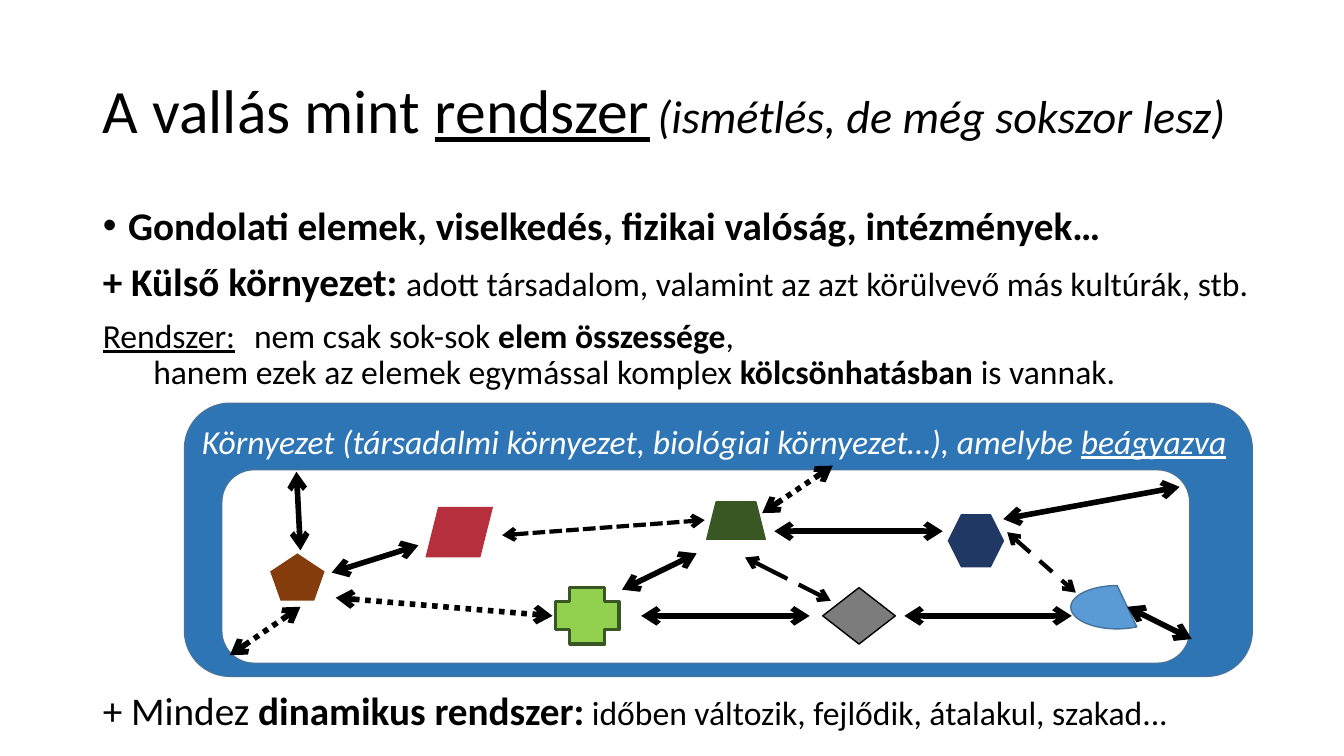
from lxml import etree
from pptx import Presentation
from pptx.dml.color import RGBColor
from pptx.enum.dml import MSO_LINE
from pptx.enum.shapes import MSO_CONNECTOR, MSO_SHAPE
from pptx.enum.text import MSO_ANCHOR, MSO_AUTO_SIZE, PP_ALIGN
from pptx.oxml.ns import qn
from pptx.util import Emu, Pt

PX = 9144
FONT = "Calibri"
STRAIGHT = MSO_CONNECTOR.STRAIGHT
ROUND_RECT = MSO_SHAPE.ROUNDED_RECTANGLE
DOTS, SHORT = MSO_LINE.ROUND_DOT, MSO_LINE.SQUARE_DOT
DASH, LONG = MSO_LINE.DASH, MSO_LINE.LONG_DASH
LEFT, TOP, MIDDLE = PP_ALIGN.LEFT, MSO_ANCHOR.TOP, MSO_ANCHOR.MIDDLE

COLORS = {
    "black": "000000", "white": "FFFFFF", "frame": "2E75B6", "edge": "43739E",
    "brown": "843C0C", "navy": "203864", "lime": "92D050", "green": "385723",
    "sky": "5B9BD5", "red": "B52F3C", "gray": "7C7C7C",
}

ELEMENTS = [
    (MSO_SHAPE.REGULAR_PENTAGON, (268, 549, 54, 47), "brown", None, 0),
    (MSO_SHAPE.HEXAGON, (940, 510, 56, 53), "navy", None, 0),
    (MSO_SHAPE.CROSS, (551, 583, 63, 56), "lime", "green", 2.25),
    (MSO_SHAPE.TRAPEZOID, (701, 498, 58, 37), "green", "green", 1),
    (MSO_SHAPE.CHORD, (1062, 581, 92, 43), "sky", "edge", 1),
    (MSO_SHAPE.PARALLELOGRAM, (422, 503, 67, 50), "red", None, 0),
    (MSO_SHAPE.DIAMOND, (816, 583, 72, 56), "gray", "black", 1),
]

INTERACTIONS = [
    ((636, 611, 803, 611), 4, None),
    ((768, 527, 935, 527), 4, None),
    ((498, 531, 699, 516), 3, SHORT),
    ((329, 568, 415, 541), 4, None),
    ((298, 546, 294, 468), 4, None),
    ((333, 593, 548, 611), 4, DOTS),
    ((897, 611, 1063, 611), 4, None),
    ((617, 585, 691, 549), 4, None),
    ((739, 553, 824, 596), 3, LONG),
    ((999, 528, 1067, 588), 3, DASH),
    ((995, 515, 1170, 483), 4, None),
    ((228, 650, 298, 602), 4, DOTS),
    ((1182, 634, 1118, 602), 4, None),
    ((756, 509, 826, 462), 4, DOTS),
]


def px(value):
    return Emu(value * PX)


def color(name):
    return RGBColor.from_string(COLORS[name])


def add_spans(para, spans, ink="black"):
    for text, size, style in spans:
        if text == "\n":
            para.add_line_break()
            continue
        span = para.add_run()
        span.text = text
        font = span.font
        font.name, font.size = FONT, Pt(size)
        font.color.rgb = color(ink)
        font.bold, font.italic, font.underline = ("b" in style, "i" in style, "u" in style)


def format_para(para, before=0, bullet=False, tab=None):
    para.alignment = LEFT
    para.line_spacing = 0.9
    para.space_before = Pt(before)
    props = para._p.get_or_add_pPr()
    indent = px(25) if bullet else 0
    props.set("marL", str(indent))
    props.set("indent", str(-indent))
    if bullet:
        etree.SubElement(props, qn("a:buChar")).set("char", "•")
    else:
        etree.SubElement(props, qn("a:buNone"))
    if tab:
        stops = etree.SubElement(props, qn("a:tabLst"))
        stop = etree.SubElement(stops, qn("a:tab"))
        stop.set("pos", str(px(tab)))
        stop.set("algn", "l")


def place_text(holder, box, anchor):
    holder.left, holder.top, holder.width, holder.height = map(px, box)
    frame = holder.text_frame
    frame.auto_size = MSO_AUTO_SIZE.NONE
    frame.word_wrap = True
    frame.vertical_anchor = anchor
    return frame


def add_title(page):
    frame = place_text(page.shapes.title, (92, 40, 1225, 145), MIDDLE)
    para = frame.paragraphs[0]
    format_para(para, tab=640)
    add_spans(para, [
        ("A vallás mint ", 44, ""),
        ("rendszer", 44, "u"),
        ("\t", 33, "i"),
        ("(ismétlés, de még sokszor lesz)", 33, "i"),
    ])


def add_body(page):
    frame = place_text(page.placeholders[1], (92, 200, 1218, 537), TOP)
    content = [
        (dict(before=10, bullet=True), [
            ("Gondolati elemek, viselkedés, fizikai valóság, intézmények…", 28, "b"),
        ]),
        (dict(before=10), [
            ("+ Külső környezet: ", 28, "b"),
            ("adott társadalom, valamint az azt körülvevő más kultúrák, stb.", 24, ""),
        ]),
        (dict(before=10, tab=200), [
            ("Rendszer:", 24, "u"),
            ("\tnem csak sok-sok ", 24, ""),
            ("elem összessége", 24, "b"),
            (",", 24, ""),
            ("\n", 24, ""),
            ("\thanem ezek az elemek egymással komplex ", 24, ""),
            ("kölcsönhatásban", 24, "b"),
            (" is vannak.", 24, ""),
        ]),
        (dict(before=214), [
            ("+ Mindez ", 28, ""),
            ("dinamikus rendszer:", 28, "b"),
            (" időben változik, fejlődik, átalakul, szakad...", 24, ""),
        ]),
    ]
    for index, (layout, spans) in enumerate(content):
        para = frame.add_paragraph() if index else frame.paragraphs[0]
        format_para(para, **layout)
        add_spans(para, spans)


def add_element(page, kind, box, fill, edge, weight):
    shape = page.shapes.add_shape(kind, *map(px, box))
    shape.shadow.inherit = False
    shape.fill.solid()
    shape.fill.fore_color.rgb = color(fill)
    if edge:
        shape.line.color.rgb = color(edge)
        shape.line.width = Pt(weight)
    else:
        shape.line.fill.background()
    return shape


def add_environment(page):
    outer = add_element(page, ROUND_RECT, (183, 400, 1059, 271), "frame", "edge", 1)
    frame = outer.text_frame
    frame.word_wrap = True
    frame.vertical_anchor = TOP
    frame.margin_left = frame.margin_right = px(4)
    frame.margin_top = frame.margin_bottom = px(4)
    para = frame.paragraphs[0]
    para.alignment = LEFT
    add_spans(para, [
        ("Környezet (társadalmi környezet, biológiai környezet…), amelybe ", 24, "i"),
        ("beágyazva", 24, "iu"),
    ], "white")
    add_element(page, ROUND_RECT, (220, 466, 960, 192), "white", "edge", 1)


def add_interaction(page, ends, weight, dash):
    arrow = page.shapes.add_connector(STRAIGHT, *map(px, ends))
    arrow.line.color.rgb = color("black")
    arrow.line.width = Pt(weight)
    if dash:
        arrow.line.dash_style = dash
    props = arrow._element.spPr
    stroke = props.find(qn("a:ln"))
    for end in ("a:headEnd", "a:tailEnd"):
        etree.SubElement(stroke, qn(end)).set("type", "arrow")
    etree.SubElement(props, qn("a:effectLst"))


def main():
    deck = Presentation()
    deck.slide_width, deck.slide_height = px(1333), px(750)
    page = deck.slides.add_slide(deck.slide_layouts[1])
    add_title(page)
    add_body(page)
    add_environment(page)
    for element in ELEMENTS:
        add_element(page, *element)
    for interaction in INTERACTIONS:
        add_interaction(page, *interaction)
    deck.save("out.pptx")


if __name__ == "__main__":
    main()
